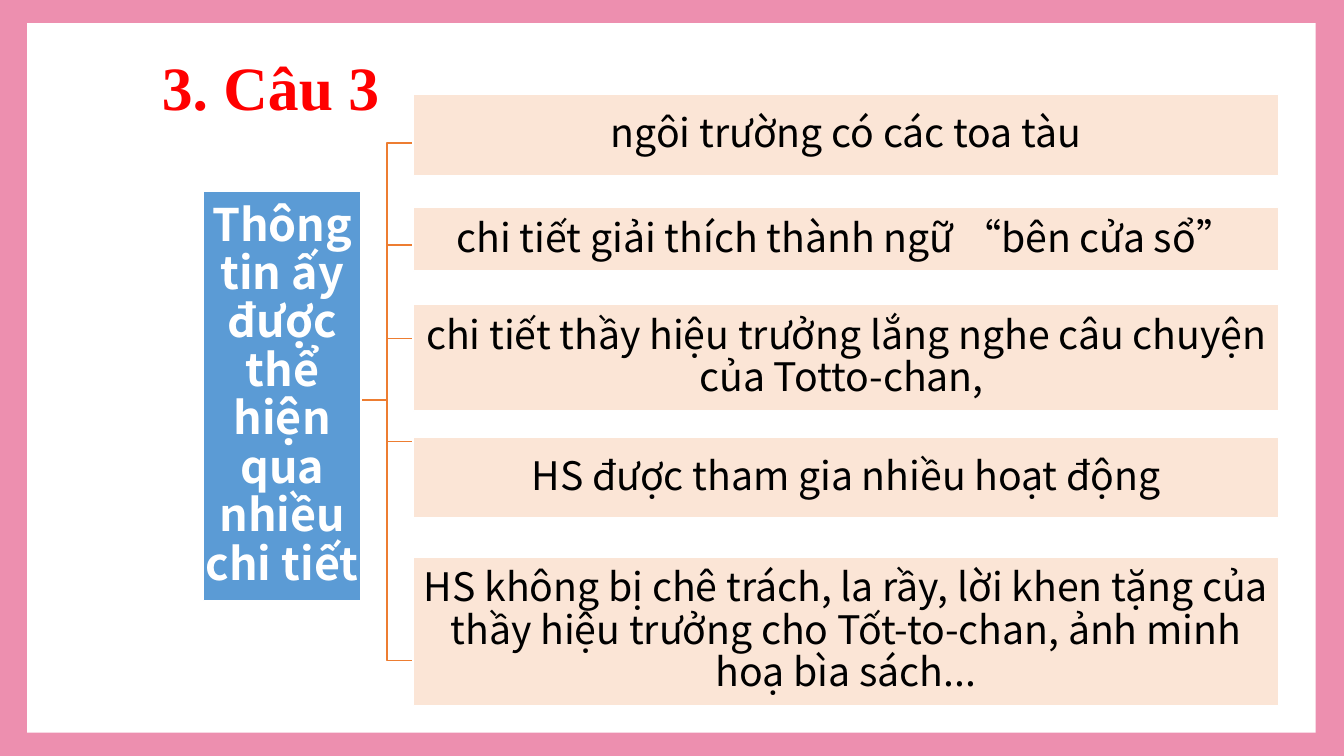
from dataclasses import dataclass

from pptx import Presentation
from pptx.dml.color import RGBColor
from pptx.enum.shapes import MSO_SHAPE as Shape
from pptx.enum.text import MSO_ANCHOR as Anchor, MSO_AUTO_SIZE as AutoSize, PP_ALIGN as Align
from pptx.util import Pt

PX = 9144  # 100 px to the inch
SLIDE_W, SLIDE_H = 1333, 750

PINK = RGBColor(0xED, 0x8F, 0xAF)
WHITE = RGBColor(0xFF, 0xFF, 0xFF)
BLACK = RGBColor(0x00, 0x00, 0x00)
RED = RGBColor(0xFF, 0x00, 0x00)
BLUE = RGBColor(0x5B, 0x9B, 0xD5)
PEACH = RGBColor(0xFB, 0xE5, 0xD6)
ORANGE = RGBColor(0xED, 0x7D, 0x31)

TITLE_FONT = "Times New Roman"
BODY_FONT = "Noto Sans CJK SC"

ROOT_X, ROOT_Y, ROOT_W, ROOT_H = 202, 190, 156, 406
DETAIL_X, DETAIL_W = 410, 858
FORK_START = (ROOT_X + ROOT_W, 397)
FORK_X, FORK_END_X = 384, 409


@dataclass(frozen=True)
class Detail:
    text: str
    top: int
    height: int
    branch_y: int


DETAILS = [
    Detail("ngôi trường có các toa tàu", 94, 80, 142),
    Detail("chi tiết giải thích thành ngữ “bên cửa sổ”", 206, 63, 243),
    Detail("chi tiết thầy hiệu trưởng lắng nghe câu chuyện của Totto-chan, ", 302, 106, 336),
    Detail("HS được tham gia nhiều hoạt động", 434, 80, 438),
    Detail("HS không bị chê trách, la rầy, lời khen tặng của thầy hiệu trưởng "
           "cho Tốt-to-chan, ảnh minh hoạ bìa sách...", 553, 147, 655),
]


def add_rect(s, x: int, y: int, w: int, h: int, fill: RGBColor):
    sp = s.shapes.add_shape(Shape.RECTANGLE, x * PX, y * PX, w * PX, h * PX)
    sp.shadow.inherit = False
    sp.fill.solid()
    sp.fill.fore_color.rgb = fill
    sp.line.fill.background()
    return sp


def add_run(p, text: str, font: str, size: int, color: RGBColor, bold: bool) -> None:
    r = p.add_run()
    r.text = text
    r.font.name = font
    r.font.size = Pt(size)
    r.font.bold = bold
    r.font.color.rgb = color


def add_text_box(s, x: int, y: int, w: int, h: int, fill: RGBColor,
                 text: str, size: int, color: RGBColor, bold: bool = False) -> None:
    """Add a white-edged rectangle with centred text."""
    sp = add_rect(s, x, y, w, h, fill)
    sp.line.color.rgb = WHITE
    sp.line.width = Pt(1)
    tf = sp.text_frame
    tf.word_wrap = True
    tf.vertical_anchor = Anchor.MIDDLE
    tf.margin_left = tf.margin_right = tf.margin_top = tf.margin_bottom = 2 * PX
    p = tf.paragraphs[0]
    p.alignment = Align.CENTER
    p.line_spacing = 0.9
    add_run(p, text, BODY_FONT, size, color, bold)


def add_branch(s, branch_y: int) -> None:
    """Draw the bent line from the root box to one detail."""
    start_x, start_y = FORK_START
    builder = s.shapes.build_freeform(start_x, start_y, scale=PX)
    builder.add_line_segments(
        [(FORK_X, start_y), (FORK_X, branch_y), (FORK_END_X, branch_y)], close=False)
    sp = builder.convert_to_shape()
    sp.shadow.inherit = False
    sp.fill.background()
    sp.line.color.rgb = ORANGE
    sp.line.width = Pt(1)


def set_title(s, text: str) -> None:
    title = s.shapes.title
    title.left, title.top, title.width, title.height = 78 * PX, 37 * PX, 381 * PX, 118 * PX
    tf = title.text_frame
    tf.auto_size = AutoSize.NONE
    tf.word_wrap = True
    tf.vertical_anchor = Anchor.TOP
    tf.margin_top = 12 * PX
    p = tf.paragraphs[0]
    p.alignment = Align.CENTER
    p.line_spacing = 1.0
    add_run(p, text, TITLE_FONT, 44, RED, True)


def add_frame(s) -> None:
    """Put the pink border and white page behind the title."""
    for sp in (add_rect(s, 0, 0, SLIDE_W, SLIDE_H, PINK),
               add_rect(s, 27, 23, 1278, 704, WHITE)):
        s.shapes.title.element.addprevious(sp.element)


def main() -> None:
    prs = Presentation()
    prs.slide_width, prs.slide_height = SLIDE_W * PX, SLIDE_H * PX
    s = prs.slides.add_slide(prs.slide_layouts[5])
    add_frame(s)
    set_title(s, "3. Câu 3")
    for detail in DETAILS:
        add_branch(s, detail.branch_y)
    add_text_box(s, ROOT_X, ROOT_Y, ROOT_W, ROOT_H, BLUE,
                 "Thông tin ấy được thể hiện qua nhiều chi tiết", 32, WHITE, bold=True)
    for detail in DETAILS:
        add_text_box(s, DETAIL_X, detail.top, DETAIL_W, detail.height, PEACH,
                     detail.text, 28, BLACK)
    prs.save("out.pptx")


if __name__ == "__main__":
    main()
